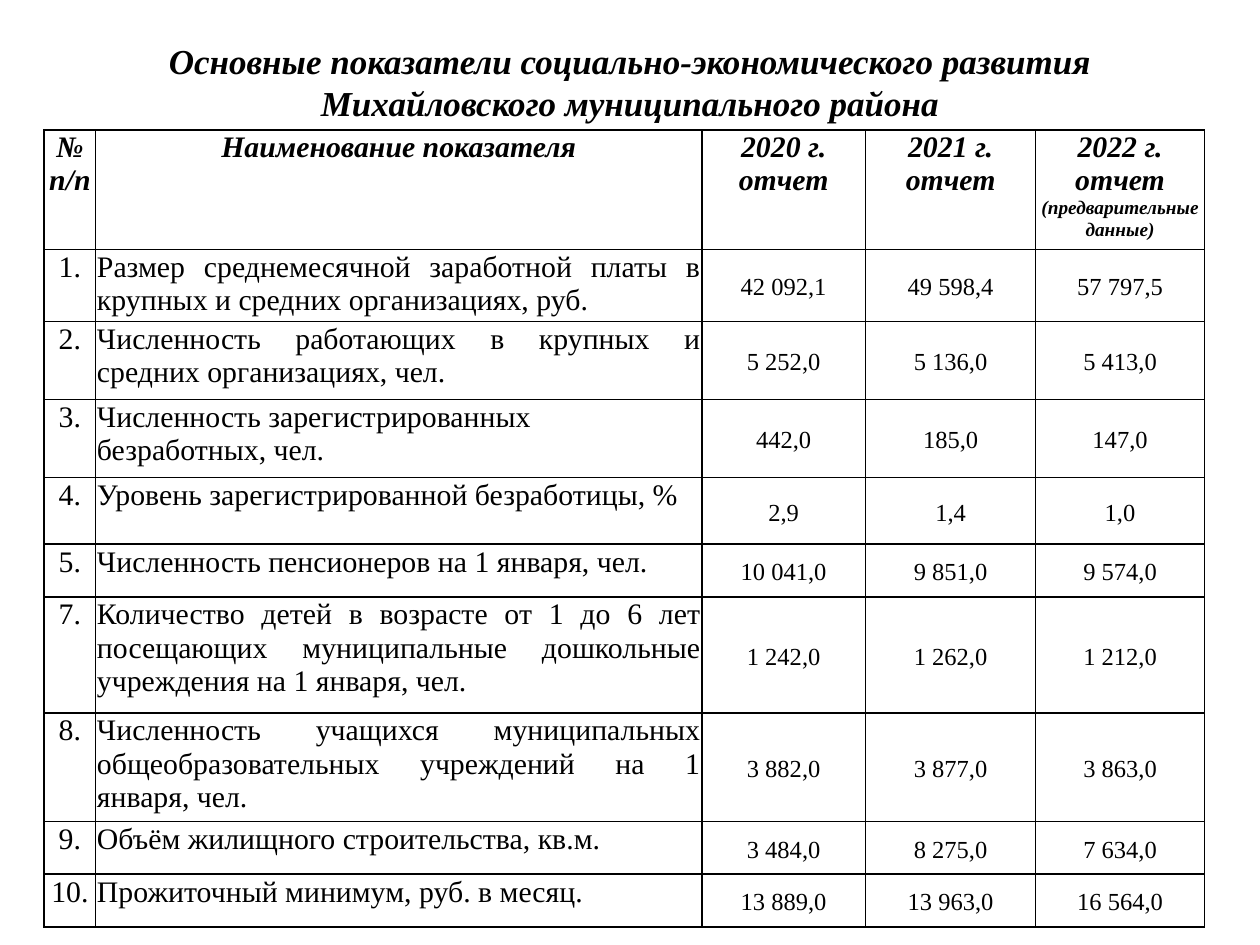
"""Build a slide with a table of a district's main social and economic indicators."""
import lxml.etree
import pptx
import pptx.dml.color
import pptx.enum.text
import pptx.oxml.ns
import pptx.util

BLACK = pptx.dml.color.RGBColor(0, 0, 0)
FONT = "Times New Roman"
ALIGN = pptx.enum.text.PP_ALIGN
ANCHOR = pptx.enum.text.MSO_ANCHOR
Inches = pptx.util.Inches

TITLE = ("Основные показатели социально-экономического развития\v"
         "Михайловского муниципального района")
HEADERS = ["№ n/n", "Наименование показателя", "2020 г. отчет", "2021 г. отчет", "2022 г. отчет "]
HEADER_NOTE = "(предварительные данные)"
INDICATORS = [
    ("1.", "Размер среднемесячной заработной платы в крупных и средних организациях, руб.",
     "42 092,1", "49 598,4", "57 797,5"),
    ("2.", "Численность работающих в крупных и средних организациях, чел.",
     "5 252,0", "5 136,0", "5 413,0"),
    ("3.", "Численность зарегистрированных безработных, чел.", "442,0", "185,0", "147,0"),
    ("4.", "Уровень зарегистрированной безработицы, %", "2,9", "1,4", "1,0"),
    ("5.", "Численность пенсионеров на 1 января, чел.", "10 041,0", "9 851,0", "9 574,0"),
    ("7.", "Количество детей в возрасте от 1 до 6 лет посещающих муниципальные дошкольные "
     "учреждения на 1 января, чел.", "1 242,0", "1 262,0", "1 212,0"),
    ("8.", "Численность учащихся муниципальных общеобразовательных учреждений на 1 января, чел.",
     "3 882,0", "3 877,0", "3 863,0"),
    ("9.", "Объём жилищного строительства, кв.м.", "3 484,0", "8 275,0", "7 634,0"),
    ("10.", "Прожиточный минимум, руб. в месяц.", "13 889,0", "13 963,0", "16 564,0"),
]
LEFT_ALIGNED = "3."
COLUMN_WIDTHS = [0.41, 4.81, 1.3, 1.35, 1.34]
ROW_HEIGHTS = [0.95, 0.57, 0.62, 0.62, 0.53, 0.42, 0.92, 0.86, 0.42, 0.42]


def write(para, text, size=17, strong=False, align=ALIGN.CENTER, spacing=None):
    """Add formatted text to a paragraph."""
    para.alignment = align
    if spacing:
        para.line_spacing = spacing
    for index, line in enumerate(text.split("\v")):
        if index:
            para.add_line_break()
        span = para.add_run()
        span.text = line
        span.font.name = FONT
        span.font.size = pptx.util.Pt(size)
        span.font.bold = span.font.italic = strong
        span.font.color.rgb = BLACK


def set_border(cell, side, width):
    """Draw one black side of a cell."""
    properties = cell._tc.get_or_add_tcPr()
    line = lxml.etree.SubElement(properties, pptx.oxml.ns.qn(f"a:ln{side}"),
                                 w=str(pptx.util.Pt(width)))
    fill = lxml.etree.SubElement(line, pptx.oxml.ns.qn("a:solidFill"))
    lxml.etree.SubElement(fill, pptx.oxml.ns.qn("a:srgbClr"), val=str(BLACK))


def format_cell(cell, row, is_value):
    """Set the borders, fill, margins and anchor of a cell."""
    thin_side = {0: "B", 1: "T"}.get(row)
    for side in "LRTB":
        set_border(cell, side, 0.5 if side == thin_side else 1)
    cell.fill.background()
    cell.margin_left = cell.margin_right = Inches(0.07 if is_value else 0.01)
    cell.margin_top = Inches(0 if is_value else 0.01)
    cell.margin_bottom = 0
    cell.vertical_anchor = ANCHOR.MIDDLE if is_value else ANCHOR.TOP


def add_title(page):
    """Fill the title placeholder."""
    box = page.shapes.title
    box.left, box.top, box.width, box.height = map(Inches, (0.5, 0.21, 9, 1.02))
    frame = box.text_frame
    frame.auto_size = pptx.enum.text.MSO_AUTO_SIZE.NONE
    frame.vertical_anchor = ANCHOR.MIDDLE
    frame.margin_bottom = Inches(0.19)
    write(frame.paragraphs[0], TITLE, size=20, strong=True)


def add_indicators(page):
    """Add the table of indicators."""
    table = page.shapes.add_table(
        len(ROW_HEIGHTS), len(COLUMN_WIDTHS), Inches(0.35), Inches(1.03),
        Inches(sum(COLUMN_WIDTHS)), Inches(sum(ROW_HEIGHTS))).table
    table.first_row = table.horz_banding = False
    for column, width in zip(table.columns, COLUMN_WIDTHS):
        column.width = Inches(width)
    for table_row, height in zip(table.rows, ROW_HEIGHTS):
        table_row.height = Inches(height)
    for row, texts in enumerate([HEADERS, *INDICATORS]):
        for column, text in enumerate(texts):
            cell = table.cell(row, column)
            para = cell.text_frame.paragraphs[0]
            is_value = row > 0 and column > 1
            format_cell(cell, row, is_value)
            if is_value:
                write(para, text, size=14, spacing=1.15)
            elif row and column == 1:
                write(para, text, align=ALIGN.LEFT if texts[0] == LEFT_ALIGNED else ALIGN.JUSTIFY)
            else:
                write(para, text, strong=row == 0)
    write(table.cell(0, len(HEADERS) - 1).text_frame.paragraphs[0], HEADER_NOTE,
          size=11, strong=True)


def main():
    """Build and save the deck."""
    deck = pptx.Presentation()
    deck.slide_width, deck.slide_height = Inches(10), Inches(7.5)
    page = deck.slides.add_slide(deck.slide_layouts[5])
    add_title(page)
    add_indicators(page)
    deck.save("out.pptx")


if __name__ == "__main__":
    main()
